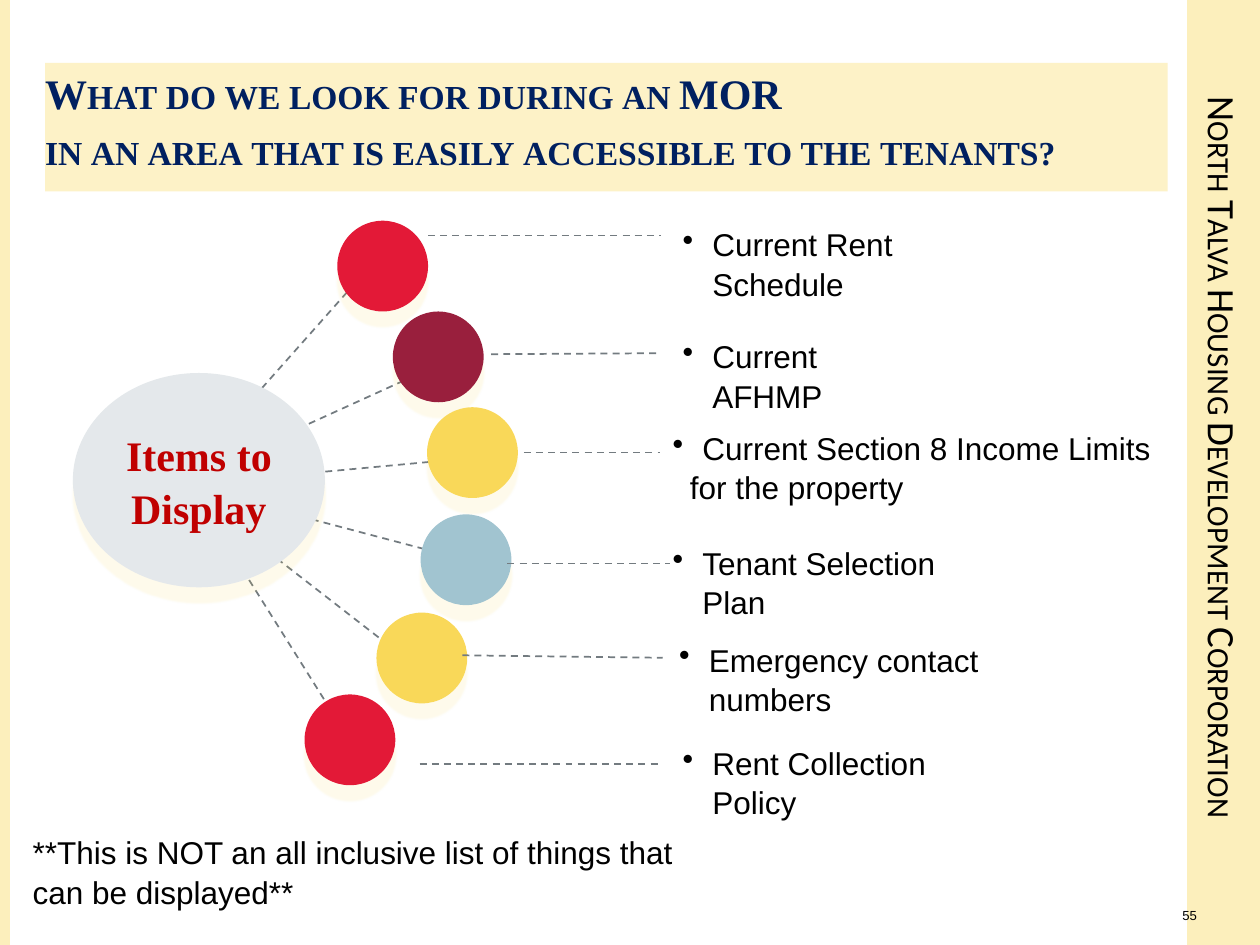
from lxml import etree
from pptx import Presentation
from pptx import util as u
from pptx.dml.color import RGBColor
from pptx.enum import dml, shapes, text
from pptx.oxml.ns import qn

CREAM, PALE, GREY, GOLD = "FCEFBC", "FDF2C7", "737B80", "FBD443"
RED, WINE, SUN, BLUE = "E31937", "991F3D", "F9D859", "A1C4D0"
BALL = 1.83

# ball colour, ball corner, spoke start, spoke end, leader start, leader end
RAYS = [
    (RED, (5.33, 0), (2.18, 5.21), (5.97, 0.94), (7.16, 0.3), (11.86, 0.3)),
    (WINE, (6.45, 1.83), (2.08, 5.31), (7.16, 3), (8.43, 2.69), (11.84, 2.67)),
    (SUN, (7.14, 3.76), (2.16, 5.33), (7.85, 4.8), (9.09, 4.67), (11.84, 4.67)),
    (BLUE, (7.01, 5.92), (2.21, 5.33), (8, 6.86), (8.76, 6.91), (12.04, 6.91)),
    (SUN, (6.12, 7.9), (2.18, 5.31), (6.73, 8.84), (7.85, 8.76), (11.89, 8.81)),
    (RED, (4.67, 9.55), (2.64, 5.79), (5.56, 10.44), (6.99, 10.95), (11.86, 10.95)),
]

# left, top, width, lines
ITEMS = [
    (0.2, 0, 7.26, ["Current Rent Schedule"]),
    (0.2, 2.26, 5.26, ["Current AFHMP"]),
    (0, 4.11, 12.7, ["Current Section 8 Income Limits", "for the property"]),
    (0, 6.43, 6.93, ["Tenant Selection Plan"]),
    (0.13, 8.38, 8.89, ["Emergency contact numbers"]),
    (0.2, 10.46, 6.96, ["Rent Collection Policy"]),
]


def color(code):
    return RGBColor.from_string(code)


def cms(box):
    return [u.Cm(v) for v in box]


def shape(slide, kind, box, fill):
    part = slide.shapes.add_shape(kind, *cms(box))
    part.shadow.inherit = False
    part.fill.solid()
    part.fill.fore_color.rgb = color(fill)
    part.line.fill.background()
    return part


def write(part, lines, size, face="Arial", code="000000", bold=False,
          align=text.PP_ALIGN.LEFT, anchor=text.MSO_ANCHOR.TOP,
          inset=None, space=1.05):
    frame = part.text_frame
    frame.word_wrap = True
    frame.vertical_anchor = anchor
    if inset is not None:
        frame.margin_left = frame.margin_right = u.Cm(inset)
        frame.margin_top = frame.margin_bottom = u.Cm(inset)
    frame.text = "\n".join(lines)
    for para in frame.paragraphs:
        para.alignment = align
        para.line_spacing = space
        font = para.font
        font.name, font.size, font.bold = face, u.Pt(size), bold
        font.color.rgb = color(code)
    return frame


def label(slide, box, lines, size, **style):
    return write(slide.shapes.add_textbox(*cms(box)), lines, size, **style)


def small_caps(frame):
    for para in frame.paragraphs:
        for run in para.runs:
            run.font._element.set("cap", "small")


def indent(para, left, first=0, mark=None):
    props = para._p.get_or_add_pPr()
    props.set("marL", str(u.Cm(left)))
    props.set("indent", str(u.Cm(first)))
    if mark:
        bullet = etree.Element(qn("a:buChar"), char=mark)
        rest = props.find(qn("a:defRPr"))
        if rest is None:
            props.append(bullet)
        else:
            rest.addprevious(bullet)


def glow(part):
    """Soft gold shadow straight below the shape."""
    effects = part._element.spPr.find(qn("a:effectLst"))
    shade = etree.SubElement(effects, qn("a:outerShdw"), blurRad=str(u.Pt(1)),
                             dist=str(u.Pt(9)), dir="5400000",
                             algn="t", rotWithShape="0")
    tint = etree.SubElement(shade, qn("a:srgbClr"), val=GOLD)
    etree.SubElement(tint, qn("a:alpha"), val="9000")


def dash(slide, left, top, start, end):
    ends = (left + start[0], top + start[1], left + end[0], top + end[1])
    wire = slide.shapes.add_connector(shapes.MSO_CONNECTOR.STRAIGHT, *cms(ends))
    wire.line.color.rgb = color(GREY)
    wire.line.width = u.Pt(1)
    wire.line.dash_style = dml.MSO_LINE.DASH
    etree.SubElement(wire._element.spPr, qn("a:effectLst"))


def bands(slide, left, top, width, height):
    # Side bands with the upright name
    rect = shapes.MSO_SHAPE.RECTANGLE
    side = left + width - 1.47
    shape(slide, rect, (side, top, 1.47, height), CREAM)
    shape(slide, rect, (left, top, 0.2, height), CREAM)
    frame = label(slide, (side, top + 1.07, 1.47, 16.31),
                  ["North Talva Housing Development Corporation"], 22.2,
                  face="Calibri", align=text.PP_ALIGN.CENTER,
                  anchor=text.MSO_ANCHOR.MIDDLE, space=1)
    frame._txBody.bodyPr.set("vert", "vert")
    small_caps(frame)
    # Page number
    label(slide, (side - 0.33, top + 18.21, 0.53, 0.48), ["55"], 7.5,
          align=text.PP_ALIGN.RIGHT, anchor=text.MSO_ANCHOR.MIDDLE,
          inset=0, space=1)


def title(slide, *box):
    bar = shape(slide, shapes.MSO_SHAPE.RECTANGLE, box, PALE)
    small_caps(write(bar, ["What do we look for during an MOR",
                           "in an area that is easily accessible to the tenants?"],
                     24, face="Times New Roman", code="002060", bold=True,
                     inset=0, space=1.1))


def fan(slide, left, top):
    oval = shapes.MSO_SHAPE.OVAL
    # Spokes
    for _, _, start, end, _, _ in RAYS:
        dash(slide, left, top, start, end)
    # Balls and leaders
    for fill, (x, y), _, _, start, end in RAYS:
        glow(shape(slide, oval, (left + x, top + y, BALL, BALL), fill))
        dash(slide, left, top, start, end)
    # Hub
    hub = shape(slide, oval, (left, top + 3.07, 5.08, 4.32), "E4E8EB")
    glow(hub)
    write(hub, ["Items to Display"], 24, face="Times New Roman", code="C00000",
          bold=True, align=text.PP_ALIGN.CENTER,
          anchor=text.MSO_ANCHOR.MIDDLE, inset=0)


def items(slide, left, top):
    for x, y, width, lines in ITEMS:
        box = (left + x, top + y, width, 1.02 if len(lines) == 1 else 1.8)
        head, *rest = label(slide, box, lines, 18).paragraphs
        # The two-line item keeps its second line near the bullet
        indent(head, 0.6, -0.6, "•")
        for para in rest:
            indent(para, 0.35)


def note(slide, *box):
    label(slide, box, ["**This is NOT an all inclusive list of things that "
                       "can be displayed**"], 18)


def main():
    deck = Presentation()
    deck.slide_width, deck.slide_height = u.Cm(25.4), u.Cm(19.05)
    slide = deck.slides.add_slide(deck.slide_layouts[6])
    bands(slide, 0, 0, 25.4, 19.05)
    fan(slide, 1.47, 4.45)
    title(slide, 0.91, 1.27, 22.63, 2.59)
    items(slide, 13.31, 4.37)
    note(slide, 0.41, 16.64, 14.07, 1.8)
    deck.save("out.pptx")


if __name__ == "__main__":
    main()
